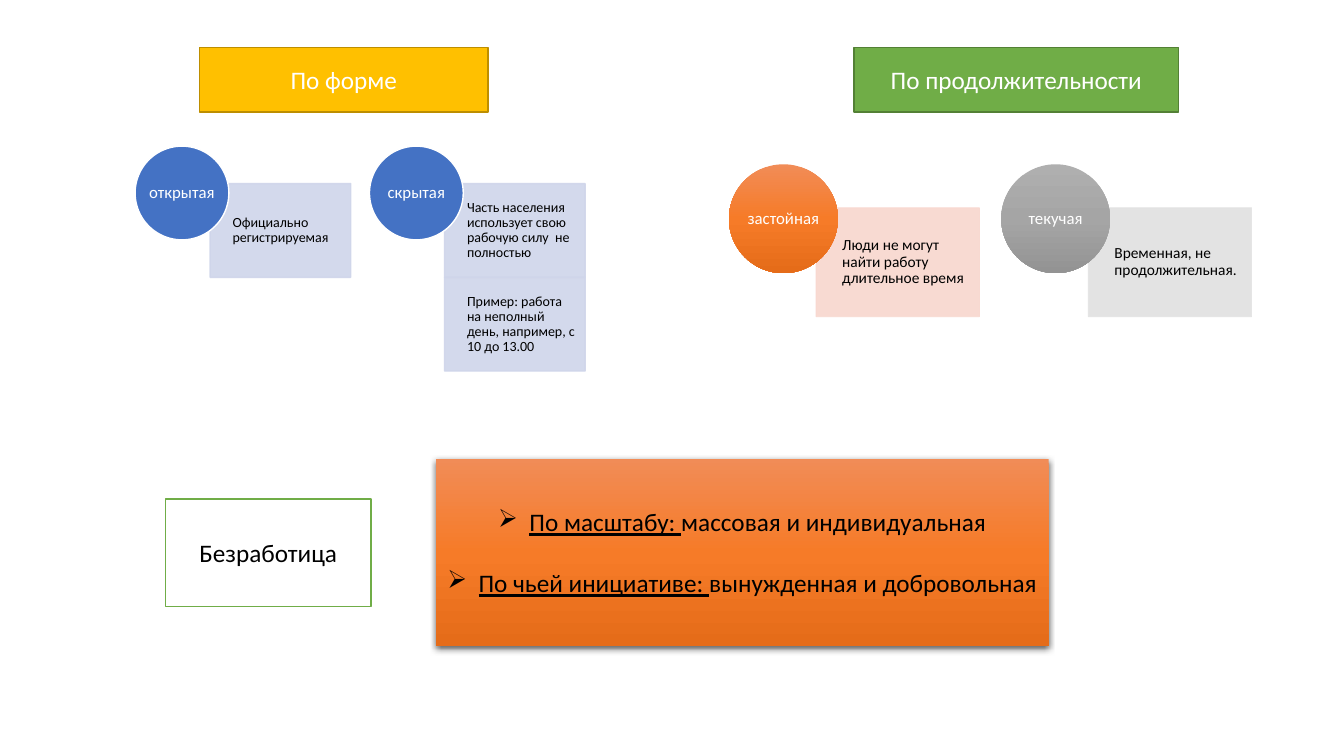
from lxml.etree import SubElement
from pptx import Presentation
from pptx.dml.color import RGBColor
from pptx.enum.shapes import MSO_SHAPE as Shape
from pptx.enum.text import MSO_ANCHOR as Anchor, PP_ALIGN as Align
from pptx.oxml.ns import qn
from pptx.util import Inches, Pt

CELL = 0.1  # inches; the slide is a grid of 133.33 columns by 75 rows
WHITE, BLACK, BLUE = "FFFFFF", "000000", "4472C4"
PALE_BLUE, PALE_ORANGE, PALE_GRAY = "CFD5EA", "F8D7CE", "E1E1E1"
YELLOW, DARK_YELLOW = "FFC000", "BD8E00"
GREEN, DARK_GREEN = "70AD47", "538035"
ORANGE_SHADES = ("F18C57", "F67B28", "E56C19")
GRAY_SHADES = ("AFAFAF", "A5A5A5", "939393")


def rgb(value):
    return RGBColor.from_string(value)


def cells(count):
    return Inches(count * CELL)


def add_node(parent, tag, **attributes):
    return SubElement(parent, qn(tag), {k: str(v) for k, v in attributes.items()})


def set_all(target, **values):
    for name, value in values.items():
        setattr(target, name, value)


class SlideBuilder:
    font = "Calibri"

    def __init__(self, deck):
        self.slide = deck.slides.add_slide(deck.slide_layouts[6])

    def figure(self, kind, left, top, width, height, fill, line=None, weight=1):
        """Add a preset shape; a tuple of fill colours makes a vertical gradient."""
        figure = self.slide.shapes.add_shape(kind, *map(cells, (left, top, width, height)))
        figure.shadow.inherit = False
        if isinstance(fill, tuple):
            self.shade(figure, fill)
        else:
            figure.fill.solid()
            figure.fill.fore_color.rgb = rgb(fill)
        if line:
            figure.line.color.rgb = rgb(line)
            figure.line.width = Pt(weight)
        else:
            figure.line.fill.background()
        return figure

    def shade(self, figure, shades):
        figure.fill.gradient()
        figure.fill.gradient_angle = 270
        stops = figure._element.spPr.find(qn("a:gradFill")).find(qn("a:gsLst"))
        for stop in list(stops):
            stops.remove(stop)
        for index, shade in enumerate(shades):
            stop = add_node(stops, "a:gs", pos=index * 100000 // (len(shades) - 1))
            add_node(stop, "a:srgbClr", val=shade)

    def add_text(self, figure, paragraphs, size, color, margins=None, **style):
        """Fill a shape with paragraphs, each a list of (text, underlined) runs."""
        frame = figure.text_frame
        set_all(frame, word_wrap=True, vertical_anchor=Anchor.MIDDLE)
        set_all(frame, **(margins or {}))
        for index, runs in enumerate(paragraphs):
            paragraph = frame.paragraphs[0] if index == 0 else frame.add_paragraph()
            set_all(paragraph, **{"alignment": Align.CENTER, **style})
            for text, underlined in runs:
                run = paragraph.add_run()
                run.text = text
                set_all(run.font, name=self.font, size=Pt(size), underline=underlined)
                run.font.color.rgb = rgb(color)

    def label(self, text, left, top, width, height, fill, line, color):
        box = self.figure(Shape.RECTANGLE, left, top, width, height, fill, line)
        self.add_text(box, [[(text, False)]], 18, color)

    def kind_of_unemployment(self, name, notes, left, top, size, fill, rim, pale, pale_weight, note_size):
        """Add a circle with note boxes stacked below it, all sized from the circle."""
        inset = Inches(0.08)
        for row, note in enumerate(notes):
            box = self.figure(Shape.RECTANGLE, left + 0.8 * size, top + (0.4 + row) * size,
                              1.5 * size, size, pale, pale, pale_weight)
            for color in box._element.spPr.iter(qn("a:srgbClr")):
                add_node(color, "a:alpha", val=90000)
            margins = dict(margin_left=cells(0.24 * size), margin_right=inset,
                           margin_top=inset, margin_bottom=inset)
            self.add_text(box, [[(note, False)]], note_size, BLACK, margins,
                          alignment=Align.LEFT, line_spacing=0.9)
        circle = self.figure(Shape.OVAL, left, top, size, size, fill, rim)
        margins = dict.fromkeys(("margin_left", "margin_right", "margin_top", "margin_bottom"), 0)
        self.add_text(circle, [[(name, False)]], 12, WHITE, margins, line_spacing=0.9)

    def callout(self, points, left, top, width, height):
        """Add the shaded panel of bulleted points, each an underlined lead and its text."""
        panel = self.figure(Shape.LINE_CALLOUT_2, left, top, width, height, ORANGE_SHADES)
        shadow = add_node(panel._element.spPr.find(qn("a:effectLst")), "a:outerShdw",
                          blurRad=Pt(4.5), dist=Pt(1.5), dir=5400000, algn="ctr", rotWithShape=0)
        add_node(add_node(shadow, "a:srgbClr", val=BLACK), "a:alpha", val=63000)
        self.add_text(panel, [[(lead, True), (text, False)] for lead, text in points], 18, BLACK)
        paragraphs = panel.text_frame.paragraphs
        for paragraph in paragraphs[:-1]:
            paragraph.space_after = Pt(22)
        for paragraph in paragraphs:
            properties = paragraph._p.get_or_add_pPr()
            properties.set("marL", str(Inches(0.31)))
            properties.set("indent", str(-Inches(0.31)))
            add_node(properties, "a:buChar", char="➢")


def main():
    deck = Presentation()
    set_all(deck, slide_width=Inches(13.33), slide_height=Inches(7.5))
    page = SlideBuilder(deck)

    by_form = [
        ("открытая", ["Официально регистрируемая"], BLUE, PALE_BLUE),
        ("скрытая", ["Часть населения использует свою рабочую силу  не полностью",
                     "Пример: работа на неполный день, например, с 10 до 13.00"], BLUE, PALE_BLUE),
    ]
    by_duration = [
        ("застойная", ["Люди не могут найти работу длительное время"], ORANGE_SHADES, PALE_ORANGE),
        ("текучая", ["Временная, не продолжительная."], GRAY_SHADES, PALE_GRAY),
    ]
    groups = [
        (by_form, 13.4, 14.5, 9.3, WHITE, 1, 10),
        (by_duration, 72.3, 16.3, 10.8, None, 0.5, 11),
    ]
    for kinds, left, top, size, rim, pale_weight, note_size in groups:
        for column, (name, notes, fill, pale) in enumerate(kinds):
            page.kind_of_unemployment(name, notes, left + 2.5 * size * column, top, size,
                                      fill, rim, pale, pale_weight, note_size)

    page.label("По форме", 19.8, 4.7, 28.6, 6.4, YELLOW, DARK_YELLOW, WHITE)
    page.label("По продолжительности", 84.7, 4.7, 32.2, 6.4, GREEN, DARK_GREEN, WHITE)
    page.callout([("По масштабу: ", "массовая и индивидуальная"),
                  ("По чьей инициативе: ", "вынужденная и добровольная")],
                 43.2, 45.5, 60.8, 18.6)
    page.label("Безработица", 16.4, 49.5, 20.4, 10.7, WHITE, GREEN, BLACK)

    deck.save("out.pptx")


if __name__ == "__main__":
    main()
